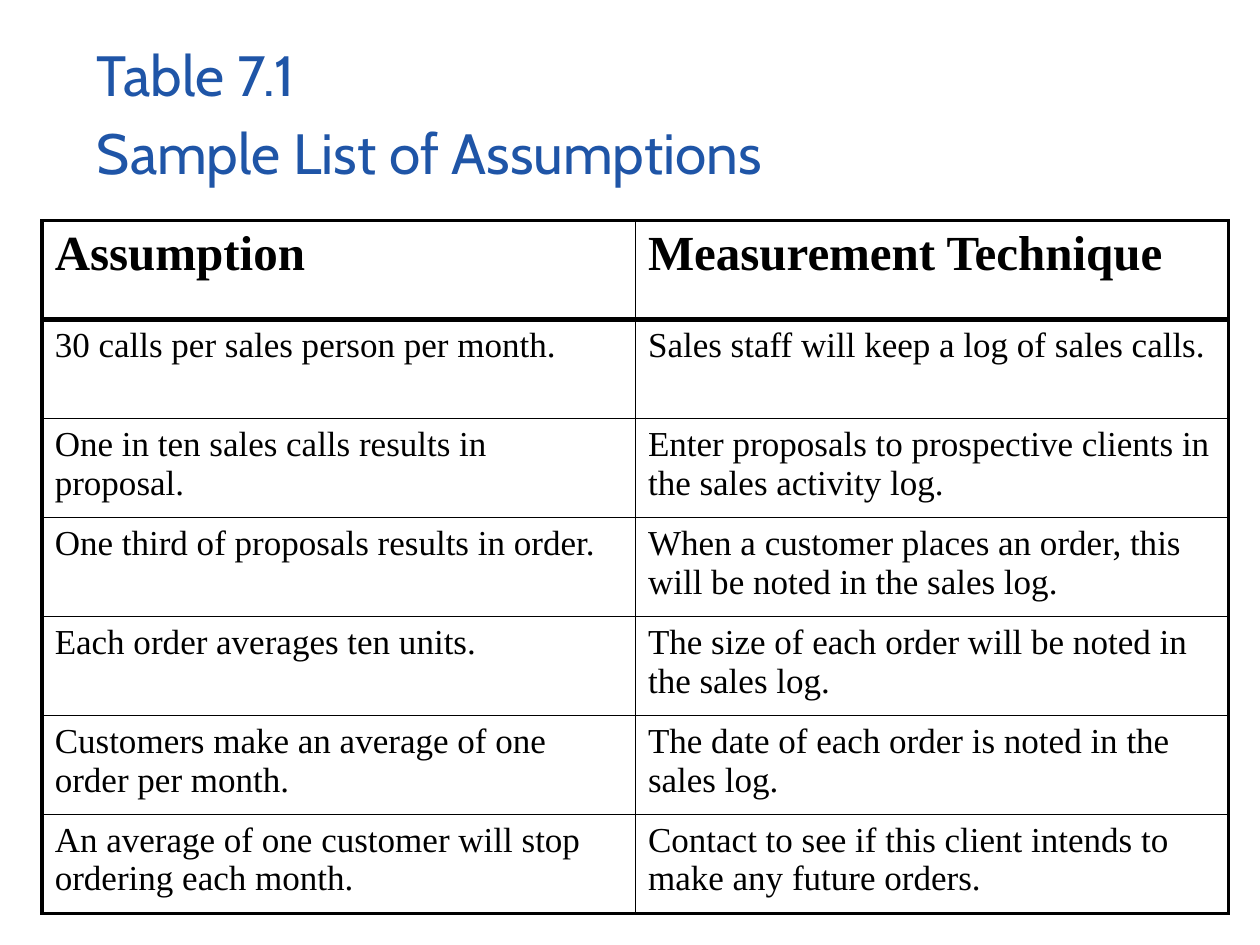
from typing import NamedTuple

from lxml import etree
from pptx import Presentation
from pptx import util as u
from pptx.dml.color import RGBColor
from pptx.enum import text
from pptx.oxml import ns

THIN, OUTER, HEADER = 1, 2.25, 3


class Style(NamedTuple):
    font: str
    size: float
    color: str
    bold: bool = False


class Row(NamedTuple):
    assumption: str
    technique: str


TITLE = Style("Cabin", 32.4, "1F55A7")
HEAD = Style("Times New Roman", 28, "000000", True)
BODY = Style("Times New Roman", 20, "000000")

ROWS = [
    Row("Assumption", "Measurement Technique"),
    Row("30 calls per sales person per month.",
        "Sales staff will keep a log of sales calls."),
    Row("One in ten sales calls results in proposal.",
        "Enter proposals to prospective clients in the sales activity log."),
    Row("One third of proposals results in order.",
        "When a customer places an order, this will be noted in the sales log."),
    Row("Each order averages ten units.",
        "The size of each order will be noted in the sales log."),
    Row("Customers make an average of one order per month.",
        "The date of each order is noted in the sales log."),
    Row("An average of one customer will stop ordering each month.",
        "Contact to see if this client intends to make any future orders."),
]


def rgb(value: str) -> RGBColor:
    return RGBColor.from_string(value)


def add_run(p, content: str, style: Style) -> None:
    r = p.add_run()
    r.text = content
    r.font.name = style.font
    r.font.size = u.Pt(style.size)
    r.font.bold = style.bold
    r.font.color.rgb = rgb(style.color)


def set_borders(cell, widths: dict[str, float], color: str = "000000") -> None:
    """Draw the cell's sides; the keys are L, R, T, B in schema order."""
    props = cell._tc.get_or_add_tcPr()
    for i, (side, width) in enumerate(widths.items()):
        line = etree.Element(ns.qn(f"a:ln{side}"), w=str(u.Pt(width)))
        fill = etree.SubElement(line, ns.qn("a:solidFill"))
        etree.SubElement(fill, ns.qn("a:srgbClr"), val=color)
        props.insert(i, line)


def add_title(slide, lines: list[str]) -> None:
    sp = slide.shapes.title
    sp.left, sp.top = u.Cm(1.7), u.Cm(0.64)
    sp.width, sp.height = u.Cm(21.59), u.Cm(3.18)
    tf = sp.text_frame
    tf.word_wrap = True
    tf.auto_size = text.MSO_AUTO_SIZE.NONE
    tf.vertical_anchor = text.MSO_ANCHOR.MIDDLE
    tf.margin_bottom = u.Cm(0.25)
    p = tf.paragraphs[0]
    p.alignment = text.PP_ALIGN.LEFT
    p.line_spacing = u.Pt(45)
    for i, line in enumerate(lines):
        if i:
            p.add_line_break()
        add_run(p, line, TITLE)


def add_assumptions(slide, rows: list[Row]) -> None:
    last_row, last_col = len(rows) - 1, len(Row._fields) - 1
    frame = slide.shapes.add_table(last_row + 1, last_col + 1, u.Cm(0.85),
                                   u.Cm(4.45), u.Cm(23.92), u.Cm(13.97))
    table = frame.table
    table.first_row = table.horz_banding = False
    for i, row in enumerate(rows):
        for j, content in enumerate(row):
            cell = table.cell(i, j)
            cell.fill.background()
            add_run(cell.text_frame.paragraphs[0], content, BODY if i else HEAD)
            set_borders(cell, {
                "L": THIN if j else OUTER,
                "R": OUTER if j == last_col else THIN,
                "T": {0: OUTER, 1: HEADER}.get(i, THIN),
                "B": {0: HEADER, last_row: OUTER}.get(i, THIN),
            })


def main() -> None:
    prs = Presentation()
    prs.slide_width, prs.slide_height = u.Cm(25.4), u.Cm(19.05)
    s = prs.slides.add_slide(prs.slide_layouts[5])  # title only

    # Heading
    add_title(s, ["Table 7.1", "Sample List of Assumptions"])

    # Table of assumptions
    add_assumptions(s, ROWS)

    prs.save("out.pptx")


if __name__ == "__main__":
    main()
